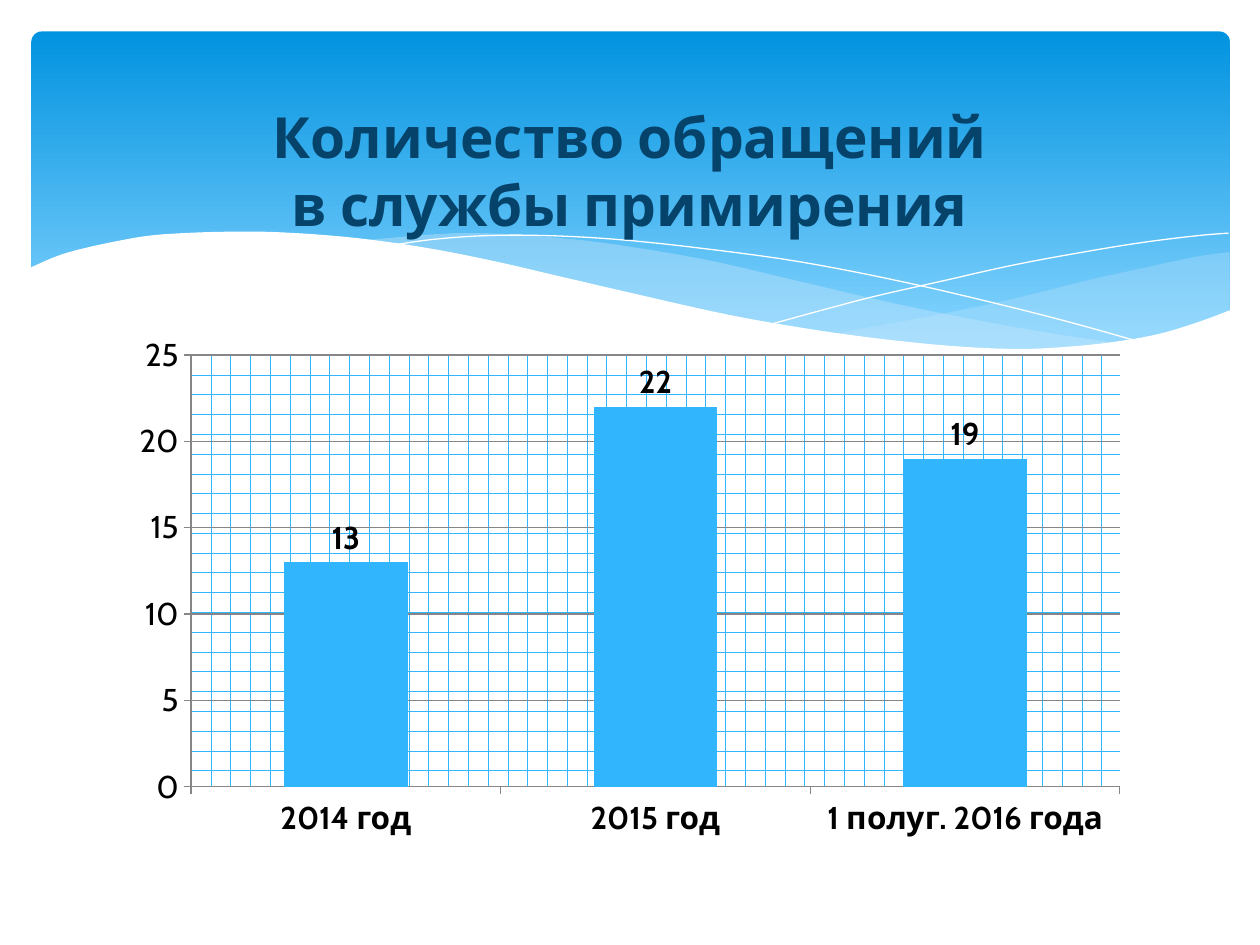
from dataclasses import dataclass
from pptx import Presentation
from pptx.chart.data import CategoryChartData as Data
from pptx.dml.color import RGBColor as Rgb
from pptx.dml.fill import FillFormat as Fill
from pptx.enum.chart import XL_CHART_TYPE as Kind, XL_LABEL_POSITION as Spot, XL_TICK_MARK as Tick
from pptx.enum.dml import MSO_PATTERN as Pat
from pptx.enum.shapes import MSO_SHAPE as Form
from pptx.enum.text import MSO_ANCHOR as Anchor, MSO_AUTO_SIZE as Fit, PP_ALIGN as Align
from pptx.oxml import parse_xml
from pptx.oxml.ns import nsdecls, qn
from pptx.util import Inches, Pt


@dataclass(frozen=True)
class Theme:
    font: str = "Cabin"
    top: str = "0293E0"
    low: str = "83D3FE"
    wave: str = "C6E7FC"
    paper: str = "FFFFFF"
    title: str = "06436B"
    bar: str = "31B6FD"
    grid: str = "868686"
    text: str = "000000"
    big: float = 32.4
    body: float = 18


def put(item, **vals):
    for key, val in vals.items():
        setattr(item, key, val)


def smooth(pts, steps=5):
    ends = [pts[0], *pts, pts[-1]]
    out = [pts[0]]
    for a, b, c, d in zip(ends, ends[1:], ends[2:], ends[3:]):
        for n in range(1, steps + 1):
            t = n / steps
            out.append(tuple(
                (2 * q + (r - p) * t + (2 * p - 5 * q + 4 * r - s) * t ** 2
                 + (3 * q - p - 3 * r + s) * t ** 3) / 2
                for p, q, r, s in zip(a, b, c, d)))
    return out


class Page:
    cols, rows = 10, 7.5

    def __init__(self, deck, look):
        self.look = look
        self.slide = deck.slides.add_slide(deck.slide_layouts[5])
        self.col = deck.slide_width / self.cols
        self.row = deck.slide_height / self.rows

    def place(self, x, y):
        return round(x * self.col), round(y * self.row)

    def box(self, x, y, w, h):
        return *self.place(x, y), *self.place(w, h)

    def style(self, font, size, color, bold=False):
        put(font, name=self.look.font, size=Pt(size), bold=bold)
        font.color.rgb = Rgb.from_string(color)

    def banner(self, at, curve):
        shape = self.slide.shapes.add_shape(Form.ROUNDED_RECTANGLE, *self.box(*at))
        shape.shadow.inherit = False
        shape.adjustments[0] = curve
        shape.line.fill.background()
        shape.fill.gradient()
        shape.fill.gradient_angle = 270
        tones = (self.look.top, 0), (self.look.low, 0.9)
        for stop, (tone, pos) in zip(shape.fill.gradient_stops, tones):
            stop.color.rgb = Rgb.from_string(tone)
            stop.position = pos

    def trace(self, pts, close):
        spots = [self.place(*p) for p in pts]
        pen = self.slide.shapes.build_freeform(*spots[0], scale=1.0)
        pen.add_line_segments(spots[1:], close=close)
        shape = pen.convert_to_shape()
        shape.shadow.inherit = False
        return shape

    def wave(self, sides, color, alpha=100):
        shape = self.trace([p for side in sides for p in smooth(side)], True)
        shape.line.fill.background()
        shape.fill.solid()
        shape.fill.fore_color.rgb = Rgb.from_string(color)
        if alpha < 100:
            tone = shape._element.spPr.find(qn("a:solidFill")).find(qn("a:srgbClr"))
            tone.append(parse_xml(f'<a:alpha {nsdecls("a")} val="{alpha * 1000}"/>'))

    def thread(self, pts):
        shape = self.trace(smooth(pts), False)
        shape.fill.background()
        shape.line.color.rgb = Rgb.from_string(self.look.paper)
        shape.line.width = 0

    def chart(self, at, cats, vals, inner):
        look = self.look
        data = Data()
        data.categories = cats
        data.add_series("Series 1", vals)
        frame = self.slide.shapes.add_chart(Kind.COLUMN_CLUSTERED, *self.box(*at), data)
        chart = frame.chart
        put(chart, has_legend=False, has_title=False)
        self.style(chart.font, look.body, look.text)
        plot = chart.plots[0]
        put(plot, gap_width=150, vary_by_categories=False, has_data_labels=True)
        put(plot.data_labels, show_value=True, position=Spot.OUTSIDE_END)
        self.style(plot.data_labels.font, look.body, look.text, True)
        bars = plot.series[0].format.fill
        bars.solid()
        bars.fore_color.rgb = Rgb.from_string(look.bar)
        cat, val = chart.category_axis, chart.value_axis
        put(val, minimum_scale=0, maximum_scale=25, major_unit=5, has_major_gridlines=True)
        for axis, bold in ((cat, True), (val, False)):
            put(axis, major_tick_mark=Tick.OUTSIDE, minor_tick_mark=Tick.NONE)
            self.style(axis.tick_labels.font, look.body, look.text, bold)
        for line in (cat.format.line, val.format.line, val.major_gridlines.format.line):
            line.color.rgb = Rgb.from_string(look.grid)
            line.width = Pt(0.75)
        self.area(chart._chartSpace.chart.plotArea, inner)

    def area(self, area, inner):
        for old in area.findall(qn("c:layout")):
            area.remove(old)
        parts = "".join(f'<c:{k} val="{v}"/>' for k, v in zip("xywh", inner))
        area.insert(0, parse_xml(
            f'<c:layout {nsdecls("c")}><c:manualLayout><c:layoutTarget val="inner"/>'
            f'<c:xMode val="edge"/><c:yMode val="edge"/>{parts}</c:manualLayout></c:layout>'))
        props = parse_xml(f'<c:spPr {nsdecls("c", "a")}/>')
        area.append(props)
        fill = Fill.from_fill_parent(props)
        fill.patterned()
        fill.pattern = Pat.DOTTED_GRID
        fill.fore_color.rgb = Rgb.from_string(self.look.bar)
        fill.back_color.rgb = Rgb.from_string(self.look.paper)

    def title(self, at, text):
        shape = self.slide.shapes.title
        put(shape, **dict(zip(("left", "top", "width", "height"), self.box(*at))))
        frame = shape.text_frame
        put(frame, text=text, word_wrap=True, auto_size=Fit.NONE, vertical_anchor=Anchor.MIDDLE)
        para = frame.paragraphs[0]
        para.alignment = Align.CENTER
        for run in para.runs:
            self.style(run.font, self.look.big, self.look.title, True)
        self.slide.shapes._spTree.append(shape._element)


RIGHT = (
    [(9.76, 2), (9.48, 2.04), (9.06, 2.13), (8.61, 2.23), (8.05, 2.37), (7.53, 2.48),
     (7.06, 2.57), (6.61, 2.65)],
    [(6.61, 2.65), (7.05, 2.71), (7.45, 2.75), (7.81, 2.77), (8.14, 2.78), (8.54, 2.76),
     (8.89, 2.72), (9.21, 2.65), (9.49, 2.57), (9.76, 2.47)],
)
LEFT = (
    [(8.93, 2.73), (8.37, 2.65), (7.75, 2.54), (7.06, 2.4), (6.29, 2.22), (5.69, 2.08),
     (5.14, 1.98), (4.65, 1.91), (4.2, 1.87), (3.8, 1.85), (3.44, 1.86), (2.86, 1.91)],
    [(2.86, 1.91), (3.42, 1.99), (4.04, 2.11), (4.49, 2.22), (5.3, 2.4), (6.01, 2.55),
     (6.65, 2.66), (7.22, 2.74), (7.73, 2.77), (8.18, 2.78), (8.57, 2.77), (8.93, 2.73)],
)
FALL = [(3.09, 1.95), (3.44, 1.9), (3.87, 1.87), (4.33, 1.87), (4.89, 1.9), (5.56, 1.97),
        (6.36, 2.08), (7.27, 2.26), (8.31, 2.51), (9.07, 2.72)]
RISE = [(6.13, 2.57), (6.53, 2.46), (6.95, 2.35), (7.48, 2.23), (8.06, 2.1), (8.66, 1.99),
        (9.1, 1.92), (9.51, 1.87), (9.75, 1.85)]
FRONT = (
    [(9.77, 2.46), (9.5, 2.56), (9.2, 2.65), (8.87, 2.71), (8.5, 2.75), (8.09, 2.77),
     (7.61, 2.75), (7.08, 2.7), (6.48, 2.62), (5.79, 2.5), (5.03, 2.33), (4.47, 2.2),
     (3.91, 2.07), (3.4, 1.97), (2.92, 1.9), (2.5, 1.86), (2.11, 1.84), (1.77, 1.84),
     (1.46, 1.85), (1.19, 1.87), (0.95, 1.91), (0.67, 1.97), (0.46, 2.03), (0.23, 2.13)],
    [(0.23, 3.29), (9.77, 3.29)],
)


def main():
    deck = Presentation()
    put(deck, slide_width=Inches(10), slide_height=Inches(7.5))
    look = Theme()
    page = Page(deck, look)
    page.banner((0.25, 0.25, 9.51, 2.7), 0.03)
    page.wave(RIGHT, look.wave, 29)
    page.wave(LEFT, look.wave, 40)
    page.thread(FALL)
    page.thread(RISE)
    page.wave(FRONT, look.paper)
    page.chart((0.95, 2.57, 8.1, 4.13), ("2014 год", "2015 год", "1 полуг. 2016 года"),
               (13, 22, 19), (0.07, 0.06, 0.91, 0.83))
    page.title((0.5, 0.68, 9, 1.34), "Количество обращений\vв службы примирения")
    deck.save("out.pptx")


if __name__ == "__main__":
    main()
